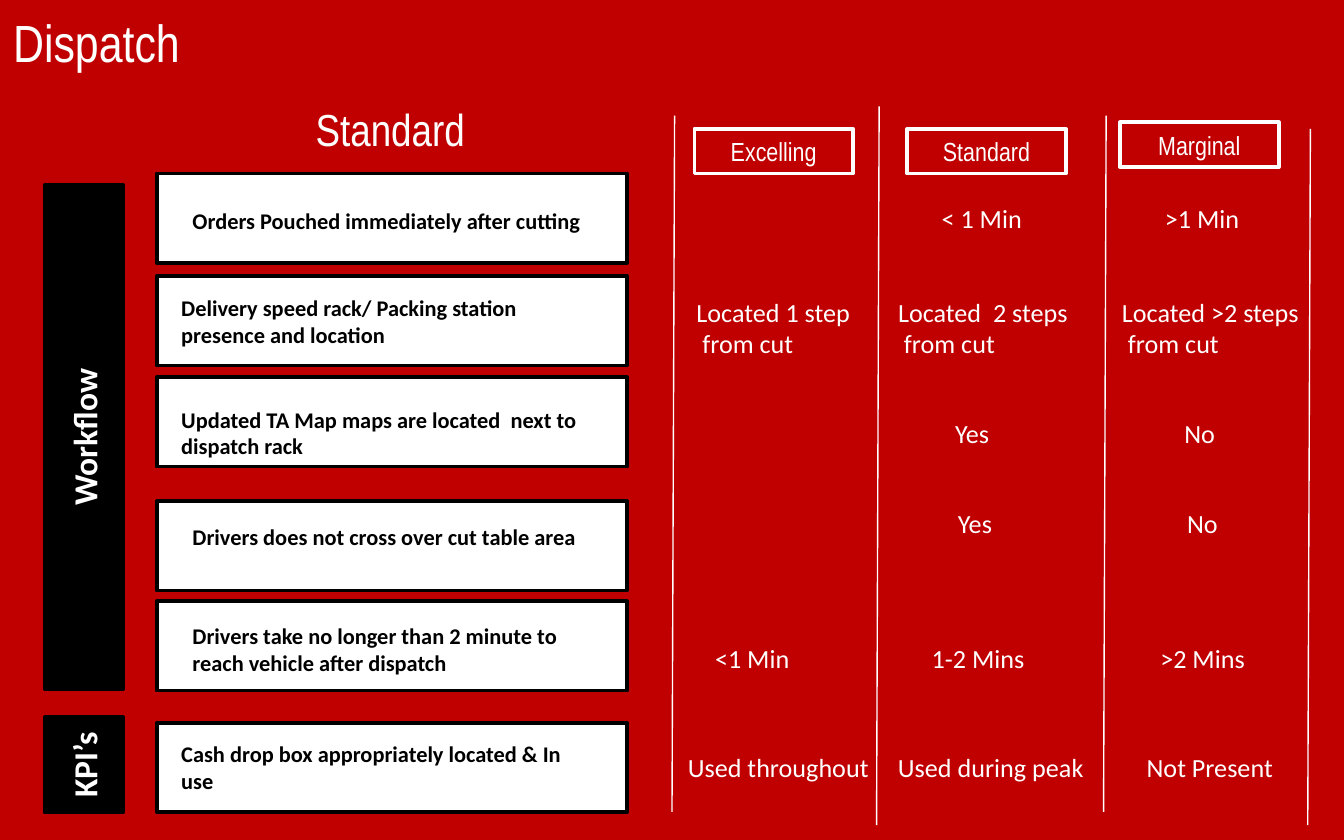
from lxml.etree import SubElement
from pptx import Presentation
from pptx.dml.color import RGBColor
from pptx.enum.shapes import MSO_CONNECTOR, MSO_SHAPE
from pptx.enum.text import MSO_ANCHOR, PP_ALIGN
from pptx.oxml.ns import qn
from pptx.util import Pt

RED, WHITE, BLACK = "C00000", "FFFFFF", "000000"
HEADING_FONT, BODY_FONT = "Arial Narrow", "Calibri"

# Column heading: text, left, top
RATINGS = [("Excelling", 372, 69), ("Standard", 486, 69), ("Marginal", 600, 65.5)]

# Column rule: x at the top, top, bottom
RULES = [(361.4, 62, 435), (471, 57, 442), (592.6, 62, 435), (702, 69, 442)]
RULE_SLANT = 1.4

# Side bar: text, top, height
BARS = [("Workflow", 99, 270), ("KPI’s", 384.2, 51)]

# Row: box top, text, text left, text top, cell top, cells as (text, left, width)
ROWS = [
    (93, "Orders Pouched immediately after cutting", 96, 107.3, 105.1,
     [("< 1 Min", 497.4, 57.7), (">1 Min", 617, 54.7)]),
    (147.8, "Delivery speed rack/ Packing station presence and location", 90, 154, 155,
     [("Located 1 step\n from cut", 366, 98),
      ("Located  2 steps\n from cut", 474, 106.5),
      ("Located >2 steps\n from cut", 594, 113)]),
    (202, "Updated TA Map maps are located  next to dispatch rack", 90, 213.8, 220.3,
     [("Yes", 504.6, 36), ("No", 627.4, 30.6)]),
    (268.4, "Drivers does not cross over cut table area", 96, 276.5, 268.4,
     [("Yes", 506.1, 36), ("No", 628.9, 30.6)]),
    (322, "Drivers take no longer than 2 minute to reach vehicle after dispatch", 96, 329.8, 340.5,
     [("<1 Min", 376, 58), ("1-2 Mins", 492, 65), (">2 Mins", 614.5, 63)]),
    (387.2, "Cash drop box appropriately located & In use", 90, 393, 399,
     [("Used throughout", 361.4, 112), ("Used during peak", 474, 114),
      ("Not Present", 607.2, 83)]),
]
BOX_LEFT, BOX_WIDTH, BOX_HEIGHT = 84, 252, 48
TEXT_WIDTH = 234
RATING_WIDTH, RATING_HEIGHT = 85, 24
BAR_CENTRE, BAR_THICKNESS = 45, 42


def rgb(color):
    return RGBColor.from_string(color)


def write(sp, text, size, font, color=WHITE, bold=False, align=PP_ALIGN.LEFT, wrap=True):
    tf = sp.text_frame
    tf.text = text
    tf.word_wrap = wrap
    for p in tf.paragraphs:
        p.alignment = align
        for r in p.runs:
            r.font.size = Pt(size)
            r.font.name = font
            r.font.bold = bold
            r.font.color.rgb = rgb(color)


def add_text(s, text, left, top, width, height, size, font, **style):
    sp = s.shapes.add_textbox(Pt(left), Pt(top), Pt(width), Pt(height))
    write(sp, text, size, font, **style)
    return sp


def add_box(s, left, top, width, height, fill, line):
    sp = s.shapes.add_shape(MSO_SHAPE.RECTANGLE, Pt(left), Pt(top), Pt(width), Pt(height))
    sp.shadow.inherit = False
    sp.fill.solid()
    sp.fill.fore_color.rgb = rgb(fill)
    sp.line.color.rgb = rgb(line)
    sp.line.width = Pt(2)
    sp.text_frame.vertical_anchor = MSO_ANCHOR.MIDDLE
    return sp


def add_rule(s, x, top, bottom):
    c = s.shapes.add_connector(
        MSO_CONNECTOR.STRAIGHT, Pt(x), Pt(top), Pt(x - RULE_SLANT), Pt(bottom))
    c.line.color.rgb = rgb(WHITE)
    c.line.width = Pt(0.75)
    SubElement(c._element.spPr, qn("a:effectLst"))


def add_bar(s, text, top, height):
    """Add an upright bar as a box turned a quarter to the left."""
    left = BAR_CENTRE - height / 2
    sp = add_box(s, left, top + (height - BAR_THICKNESS) / 2,
                 height, BAR_THICKNESS, BLACK, BLACK)
    sp.rotation = 270
    write(sp, text, 18, BODY_FONT, bold=True, align=PP_ALIGN.CENTER)


def add_row(s, box_top, text, text_left, text_top, cell_top, cells):
    add_box(s, BOX_LEFT, box_top, BOX_WIDTH, BOX_HEIGHT, WHITE, BLACK)
    add_text(s, text, text_left, text_top, TEXT_WIDTH, 36, 12, BODY_FONT,
             color=BLACK, bold=True)
    for cell, left, width in cells:
        height = 24.3 + 17 * cell.count("\n")
        add_text(s, cell, left, cell_top, width, height, 14, BODY_FONT, wrap=False)


def main():
    prs = Presentation()
    prs.slide_width, prs.slide_height = Pt(720), Pt(450)
    s = prs.slides.add_slide(prs.slide_layouts[6])
    s.background.fill.solid()
    s.background.fill.fore_color.rgb = rgb(RED)

    title = add_text(s, "Dispatch", 0, 0, 648, 45, 28, HEADING_FONT)
    title.text_frame.vertical_anchor = MSO_ANCHOR.MIDDLE
    add_text(s, "Standard", 162, 51, 106, 35, 24, HEADING_FONT, wrap=False)

    for text, left, top in RATINGS:
        sp = add_box(s, left, top, RATING_WIDTH, RATING_HEIGHT, RED, WHITE)
        write(sp, text, 14, HEADING_FONT, align=PP_ALIGN.CENTER)
    for rule in RULES:
        add_rule(s, *rule)
    for bar in BARS:
        add_bar(s, *bar)
    for row in ROWS:
        add_row(s, *row)

    prs.save("out.pptx")


if __name__ == "__main__":
    main()
